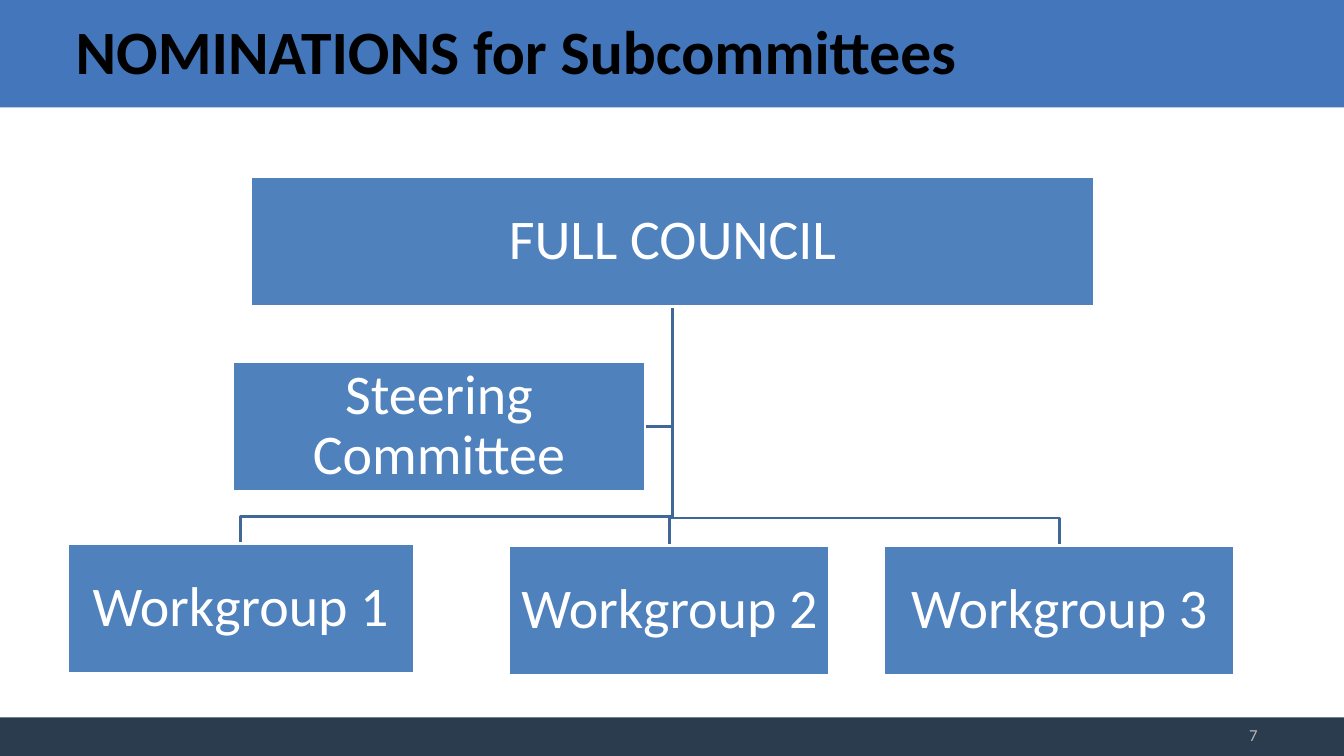
from pptx import Presentation
from pptx.dml.color import RGBColor
from pptx.enum.shapes import MSO_SHAPE
from pptx.enum.text import MSO_ANCHOR, MSO_AUTO_SIZE, PP_ALIGN
from pptx.util import Inches, Pt

RECTANGLE = MSO_SHAPE.RECTANGLE
MIDDLE = MSO_ANCHOR.MIDDLE
NO_AUTOFIT = MSO_AUTO_SIZE.NONE
LEFT, CENTER, RIGHT = PP_ALIGN.LEFT, PP_ALIGN.CENTER, PP_ALIGN.RIGHT

HEADER_BLUE = RGBColor(0x43, 0x76, 0xBB)
FOOTER_NAVY = RGBColor(0x2A, 0x3C, 0x4E)
BOX_BLUE = RGBColor(0x4F, 0x81, 0xBD)
LINK_BLUE = RGBColor(0x3F, 0x67, 0x97)
PAGE_GRAY = RGBColor(0xB5, 0xB5, 0xB5)
BLACK = RGBColor(0, 0, 0)
WHITE = RGBColor(0xFF, 0xFF, 0xFF)

COLUMNS, ROWS = 160, 90
TITLE_ONLY = 5
BOX_ROWS = 15.5
LINK_DROP = 3.24


class OrgSlide:
    """Draws on one slide; every length is in columns and rows of the grid."""

    font = "Calibri"
    line_width = Pt(2)
    box_inset = Inches(0.03)

    def __init__(self, deck):
        self.slide = deck.slides.add_slide(deck.slide_layouts[TITLE_ONLY])
        self.shapes = self.slide.shapes
        self.column = deck.slide_width / COLUMNS
        self.row = deck.slide_height / ROWS

    def point(self, x, y):
        return round(x * self.column), round(y * self.row)

    def area(self, x, y, width, height):
        return *self.point(x, y), *self.point(width, height)

    def set_text(self, frame, text, size, color, align, bold=False):
        frame.word_wrap = True
        frame.auto_size = NO_AUTOFIT
        frame.vertical_anchor = MIDDLE
        paragraph = frame.paragraphs[0]
        paragraph.alignment = align
        paragraph.line_spacing = 0.9
        run = paragraph.add_run()
        run.text = text
        run.font.name = self.font
        run.font.size = Pt(size)
        run.font.bold = bold
        run.font.color.rgb = color

    def band(self, x, y, width, height, color):
        band = self.shapes.add_shape(RECTANGLE, *self.area(x, y, width, height))
        band.shadow.inherit = False
        band.fill.solid()
        band.fill.fore_color.rgb = color
        band.line.fill.background()
        return band

    def title(self, text, x, y, width, height):
        """Fills the title placeholder and lifts it in front of the bands."""
        title = self.shapes.title
        title.left, title.top, title.width, title.height = self.area(x, y, width, height)
        title.element.getparent().append(title.element)
        self.set_text(title.text_frame, text, 44, BLACK, LEFT, bold=True)

    def box(self, text, x, y, width):
        box = self.band(x, y, width, BOX_ROWS, BOX_BLUE)
        box.line.color.rgb = WHITE
        box.line.width = self.line_width
        frame = box.text_frame
        frame.margin_left = frame.margin_right = self.box_inset
        frame.margin_top = frame.margin_bottom = self.box_inset
        self.set_text(frame, text, 40, WHITE, CENTER)

    def link(self, start, *bends):
        outline = self.shapes.build_freeform(*self.point(*start))
        outline.add_line_segments([self.point(*bend) for bend in bends], close=False)
        link = outline.convert_to_shape()
        link.shadow.inherit = False
        link.fill.background()
        link.line.color.rgb = LINK_BLUE
        link.line.width = self.line_width

    def page_number(self, text, x, y, width, height):
        number = self.shapes.add_textbox(*self.area(x, y, width, height))
        self.set_text(number.text_frame, text, 12, PAGE_GRAY, RIGHT)


def main():
    deck = Presentation()
    deck.slide_width, deck.slide_height = Inches(13.33), Inches(7.5)
    org = OrgSlide(deck)

    org.band(0, 0, COLUMNS, 12.8, HEADER_BLUE)
    org.band(0, 85.4, COLUMNS, 4.6, FOOTER_NAVY)
    org.title("NOMINATIONS for Subcommittees", 7.8, 0.7, 144, 11.5)

    council_x, council_y, council_width = 29.8, 21, 100.5
    steering_x, steering_y, steering_width = 27.7, 43, 49.1
    workgroups = [
        ("Workgroup 1", 8, 64.7, 41.3),
        ("Workgroup 2", 60.6, 64.9, 38.2),
        ("Workgroup 3", 105.2, 64.9, 41.8),
    ]

    trunk_x = council_x + council_width / 2
    trunk_top = (trunk_x, council_y + BOX_ROWS)
    steering_middle = steering_y + BOX_ROWS / 2
    org.link(trunk_top, (trunk_x, steering_middle),
             (steering_x + steering_width, steering_middle))
    for _, x, y, width in workgroups:
        center, turn = x + width / 2, y - LINK_DROP
        org.link(trunk_top, (trunk_x, turn), (center, turn), (center, y))

    org.box("FULL COUNCIL", council_x, council_y, council_width)
    for workgroup in workgroups:
        org.box(*workgroup)
    org.box("Steering Committee", steering_x, steering_y, steering_width)
    org.page_number("7", 115, 85.2, 35.9, 4.8)

    deck.save("out.pptx")


if __name__ == "__main__":
    main()
